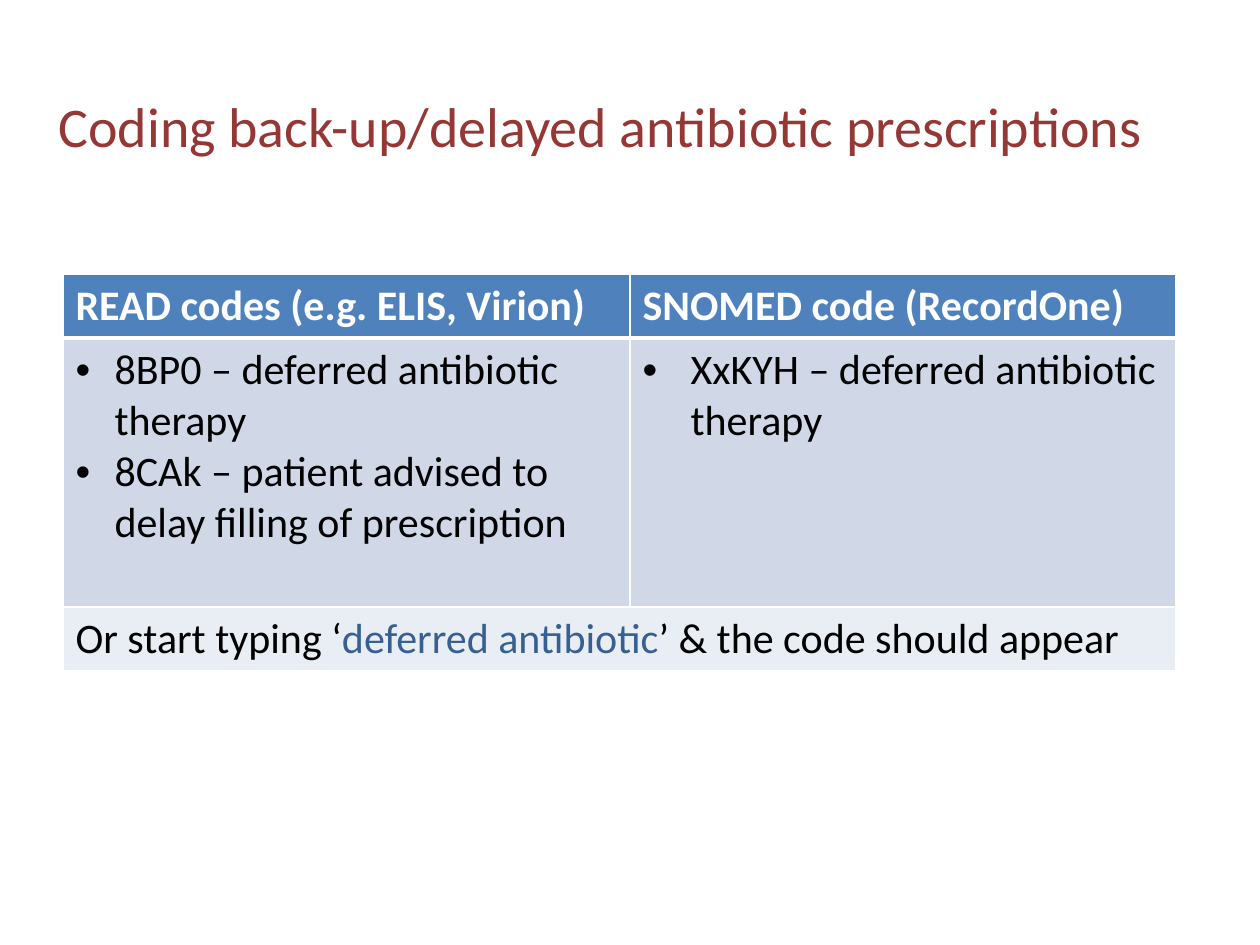
from dataclasses import dataclass

from lxml import etree
from pptx import Presentation
from pptx import util as u
from pptx.dml.color import RGBColor
from pptx.enum import text
from pptx.oxml.ns import qn


@dataclass(frozen=True)
class Theme:
    font: str = "Calibri"
    title_size: int = 32
    table_size: int = 24
    title: str = "953735"
    header: str = "4F81BD"
    codes: str = "D0D8E8"
    tip: str = "E9EDF4"
    accent: str = "376092"
    dark: str = "000000"
    light: str = "FFFFFF"


def px(length):
    return u.Emu(round(length * 914400 / 126))


class SlideBuilder:
    def __init__(self, slide, theme):
        self.slide = slide
        self.theme = theme

    def run(self, paragraph, wording, size, color, bold=False):
        run = paragraph.add_run()
        run.text = wording
        run.font.name = self.theme.font
        run.font.size = u.Pt(size)
        run.font.bold = bold
        run.font.color.rgb = RGBColor.from_string(color)

    def title(self, wording, left, top, width, height):
        heading = self.slide.shapes.title
        heading.left, heading.top = px(left), px(top)
        heading.width, heading.height = px(width), px(height)
        frame = heading.text_frame
        frame.word_wrap = True
        frame.auto_size = text.MSO_AUTO_SIZE.NONE
        frame.vertical_anchor = text.MSO_ANCHOR.TOP
        paragraph = frame.paragraphs[0]
        paragraph.alignment = text.PP_ALIGN.LEFT
        self.run(paragraph, wording, self.theme.title_size, self.theme.title)

    def table(self, left, top, columns, rows):
        table = self.slide.shapes.add_table(
            len(rows), len(columns), px(left), px(top),
            px(sum(columns)), px(sum(rows))).table
        for column, width in zip(table.columns, columns):
            column.width = px(width)
        for row, height in zip(table.rows, rows):
            row.height = px(height)
        return table

    def cell(self, cell, fill, bottom=1):
        properties = cell._tc.get_or_add_tcPr()
        for side, points in (("L", 1), ("R", 1), ("T", 1), ("B", bottom)):
            line = etree.SubElement(properties, qn(f"a:ln{side}"), w=str(u.Pt(points)))
            solid = etree.SubElement(line, qn("a:solidFill"))
            etree.SubElement(solid, qn("a:srgbClr"), val=self.theme.light)
        cell.fill.solid()
        cell.fill.fore_color.rgb = RGBColor.from_string(fill)

    def line(self, cell, runs, bold=False):
        for wording, color in runs:
            self.run(cell.text_frame.paragraphs[0], wording,
                     self.theme.table_size, color, bold)

    def bullets(self, cell, items, indent):
        frame = cell.text_frame
        for index, item in enumerate(items):
            paragraph = frame.add_paragraph() if index else frame.paragraphs[0]
            properties = paragraph._p.get_or_add_pPr()
            properties.set("marL", str(px(indent)))
            properties.set("indent", str(-px(indent)))
            etree.SubElement(properties, qn("a:buFont"), typeface="Arial")
            etree.SubElement(properties, qn("a:buChar"), char="•")
            self.run(paragraph, item, self.theme.table_size, self.theme.dark)


def main():
    deck = Presentation()
    deck.slide_width, deck.slide_height = px(1260), px(945)
    theme = Theme()
    page = SlideBuilder(deck.slides.add_slide(deck.slide_layouts[5]), theme)

    # Title
    page.title("Coding back-up/delayed antibiotic prescriptions", 46, 85, 1192, 81)

    # Table grid
    codes = page.table(63, 274, columns=(567, 546), rows=(63, 269, 63))
    for row, (fill, bottom) in enumerate(
            ((theme.header, 3), (theme.codes, 1), (theme.tip, 1))):
        for column in range(2):
            page.cell(codes.cell(row, column), fill, bottom)

    # Code systems and their codes
    systems = (
        ("READ codes (e.g. ELIS, Virion)", 39,
         ("8BP0 – deferred antibiotic therapy",
          "8CAk – patient advised to delay filling of prescription")),
        ("SNOMED code (RecordOne)", 48,
         ("XxKYH – deferred antibiotic therapy",)),
    )
    for column, (system, indent, entries) in enumerate(systems):
        page.line(codes.cell(0, column), [(system, theme.light)], bold=True)
        page.bullets(codes.cell(1, column), entries, indent)

    # Search tip across both columns
    tip = codes.cell(2, 0)
    tip.merge(codes.cell(2, 1))
    page.line(tip, [("Or start typing ‘", theme.dark),
                    ("deferred antibiotic", theme.accent),
                    ("’ & the code should appear", theme.dark)])

    deck.save("out.pptx")


if __name__ == "__main__":
    main()
